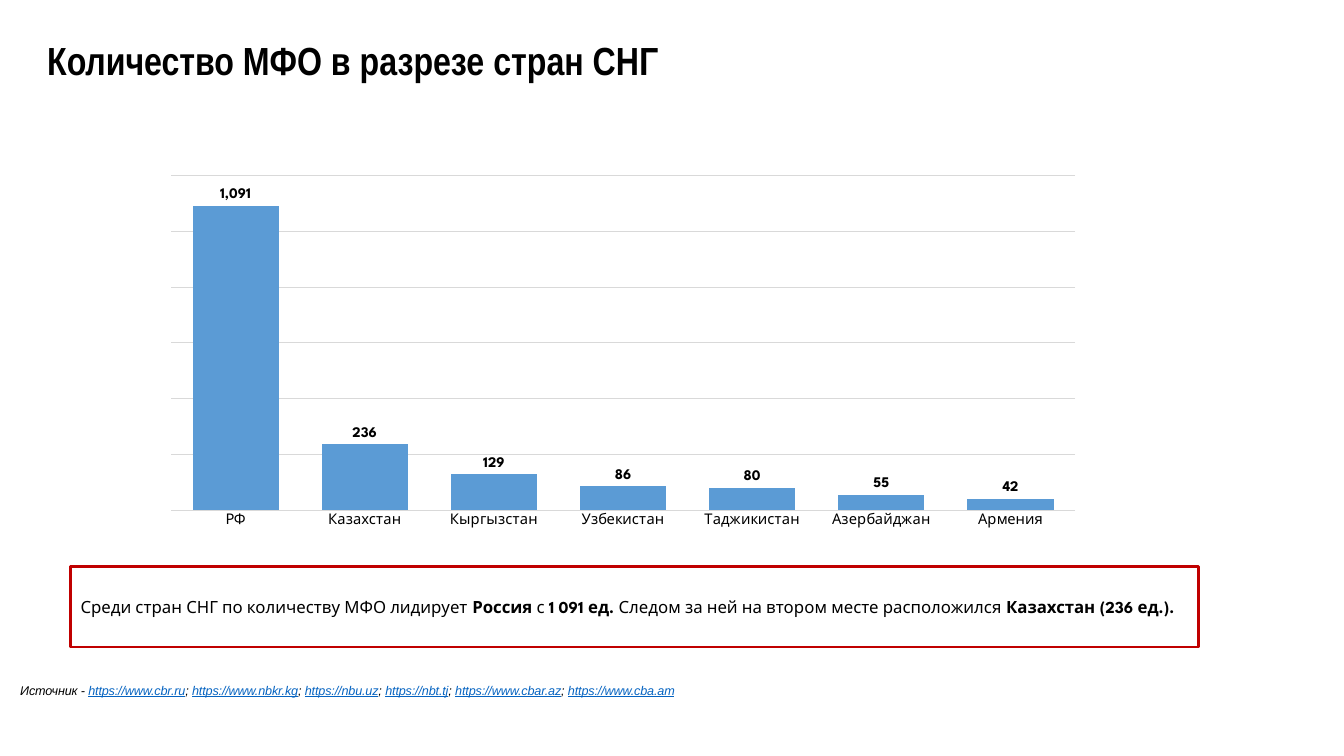
import pptx
import pptx.chart.data
import pptx.dml.color
import pptx.enum.chart
import pptx.enum.shapes
import pptx.enum.text
import pptx.util
from dataclasses import dataclass

Inches = pptx.util.Inches
Pt = pptx.util.Pt
RGB = pptx.dml.color.RGBColor.from_string


@dataclass(frozen=True)
class Theme:
    black: RGB = RGB("000000")
    bar: RGB = RGB("5B9BD5")
    grid: RGB = RGB("D9D9D9")
    frame: RGB = RGB("C00000")
    link: RGB = RGB("0563C1")
    title_font: str = "Arial Narrow"
    source_font: str = "Arial"
    body_font: str = "League Spartan"
    title_size: Pt = Pt(28)
    body_size: Pt = Pt(12)
    chart_size: Pt = Pt(10.5)
    source_size: Pt = Pt(9)


theme = Theme()


def style_font(font, name, size, bold=False, color=theme.black):
    font.name = name
    font.size = size
    font.bold = bold
    font.color.rgb = color


def add_run(paragraph, text, name, size, bold=False, color=theme.black):
    run = paragraph.add_run()
    run.text = text
    style_font(run.font, name, size, bold, color)
    return run


presentation = pptx.Presentation()
presentation.slide_width = Inches(13.33)
presentation.slide_height = Inches(7.5)
slide = presentation.slides.add_slide(presentation.slide_layouts[6])

# Title
title = slide.shapes.add_textbox(Inches(0.37), Inches(0.13), Inches(8.8), Inches(0.99))
title.text_frame.word_wrap = True
title.text_frame.vertical_anchor = pptx.enum.text.MSO_ANCHOR.MIDDLE
paragraph = title.text_frame.paragraphs[0]
paragraph.line_spacing = 0.9
add_run(paragraph, "Количество МФО в разрезе стран СНГ", theme.title_font, theme.title_size, True)

# Sources
source = slide.shapes.add_textbox(Inches(0.19), Inches(6.75), Inches(11.95), Inches(0.17))
frame = source.text_frame
frame.word_wrap = True
frame.margin_left = Inches(0.01)
frame.margin_top = Inches(0.02)
frame.margin_right = frame.margin_bottom = 0
paragraph = frame.paragraphs[0]
addresses = ["https://www.cbr.ru", "https://www.nbkr.kg", "https://nbu.uz",
             "https://nbt.tj", "https://www.cbar.az", "https://www.cba.am"]
separator = "Источник - "
for address in addresses:
    add_run(paragraph, separator, theme.source_font, theme.source_size)
    link = add_run(paragraph, address, theme.source_font, theme.source_size, color=theme.link)
    link.font.underline = True
    separator = "; "
for run in paragraph.runs:
    run.font.italic = True
    run.font._element.set("spc", "-10")

# Framed conclusion
conclusion = slide.shapes.add_shape(pptx.enum.shapes.MSO_SHAPE.RECTANGLE,
                                    Inches(0.7), Inches(5.62), Inches(11.19), Inches(0.8))
conclusion.shadow.inherit = False
conclusion.fill.background()
conclusion.line.color.rgb = theme.frame
conclusion.line.width = Pt(2)
conclusion.text_frame.word_wrap = True
conclusion.text_frame.vertical_anchor = pptx.enum.text.MSO_ANCHOR.MIDDLE
paragraph = conclusion.text_frame.paragraphs[0]
paragraph.alignment = pptx.enum.text.PP_ALIGN.LEFT
for text, bold in [("Среди стран СНГ по количеству МФО лидирует ", False),
                   ("Россия", True),
                   (" с ", False),
                   ("1 091 ед. ", True),
                   ("Следом за ней на втором месте расположился ", False),
                   ("Казахстан (236 ед.).", True)]:
    add_run(paragraph, text, theme.body_font, theme.body_size, bold)

# Column chart
data = pptx.chart.data.CategoryChartData()
data.categories = ["РФ", "Казахстан", "Кыргызстан", "Узбекистан",
                   "Таджикистан", "Азербайджан", "Армения"]
data.add_series("Series 1", [1091, 236, 129, 86, 80, 55, 42])
chart = slide.shapes.add_chart(pptx.enum.chart.XL_CHART_TYPE.COLUMN_CLUSTERED,
                               Inches(1.51), Inches(1.67), Inches(9.34), Inches(3.64), data).chart
chart.has_legend = False
chart.has_title = False
style_font(chart.font, theme.body_font, theme.chart_size)

plot = chart.plots[0]
plot.gap_width = 50
plot.vary_by_categories = False
series = plot.series[0]
series.format.fill.solid()
series.format.fill.fore_color.rgb = theme.bar
labels = series.data_labels
labels.show_value = True
labels.position = pptx.enum.chart.XL_LABEL_POSITION.OUTSIDE_END
labels.number_format = "#,##0"
labels.number_format_is_linked = False
style_font(labels.font, theme.body_font, theme.chart_size, True)

# Axes and gridlines
category_axis = chart.category_axis
category_axis.major_tick_mark = pptx.enum.chart.XL_TICK_MARK.NONE
style_font(category_axis.tick_labels.font, theme.body_font, theme.chart_size)
value_axis = chart.value_axis
value_axis.visible = False
value_axis.minimum_scale = 0
value_axis.maximum_scale = 1200
value_axis.major_unit = 200
value_axis.has_major_gridlines = True
for line in (category_axis.format.line, value_axis.major_gridlines.format.line):
    line.color.rgb = theme.grid
    line.width = Pt(0.75)

presentation.save("out.pptx")
